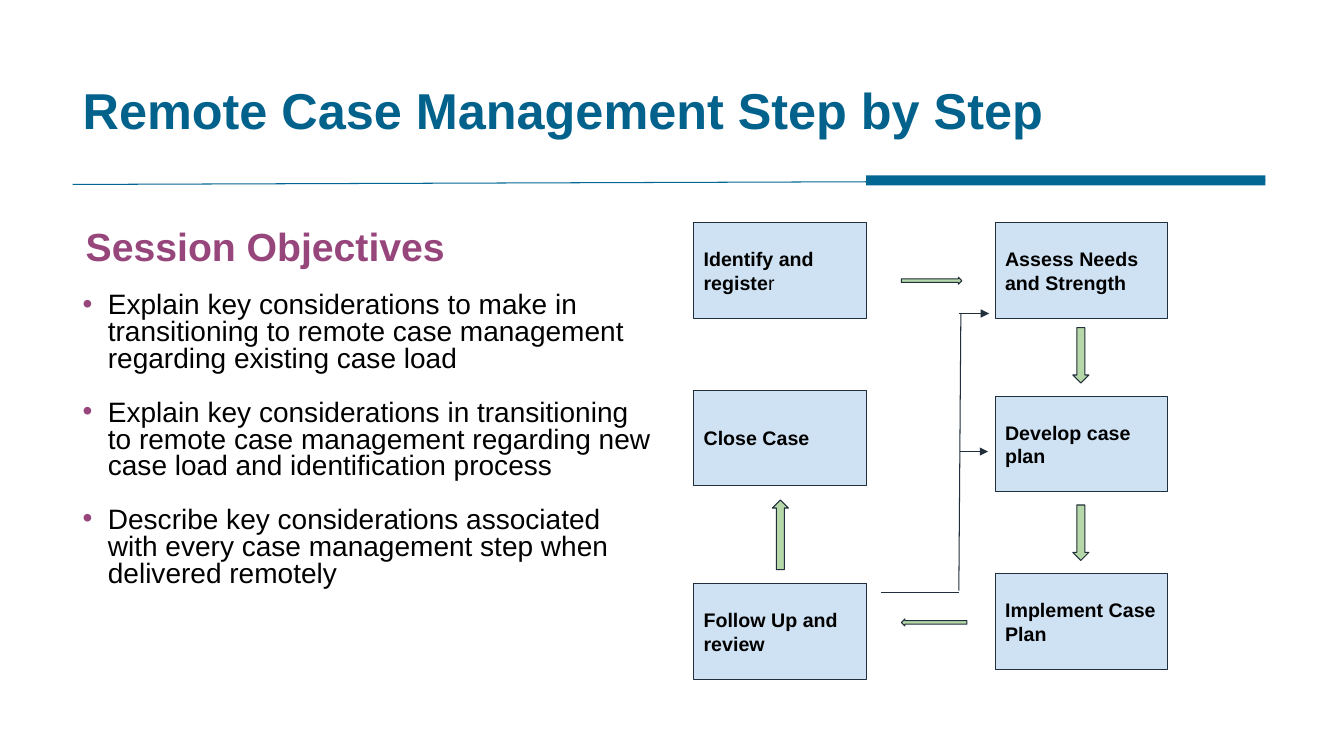
from dataclasses import dataclass

from lxml.etree import SubElement
from pptx import Presentation
from pptx.dml.color import RGBColor
from pptx.enum.shapes import MSO_CONNECTOR, MSO_SHAPE
from pptx.enum.text import MSO_ANCHOR, MSO_AUTO_SIZE, PP_ALIGN
from pptx.oxml.ns import qn
from pptx.util import Pt

PX = 9144  # EMU per px, at 100 px to the inch


@dataclass(frozen=True)
class Theme:
    font: str = "Arial"
    title: str = "02628C"
    rule: str = "036794"
    accent: str = "97467C"
    text: str = "000000"
    box: str = "CFE2F3"
    arrow: str = "B6D7A8"
    outline: str = "212E3B"
    title_size: int = 36
    heading_size: int = 28
    body_size: int = 20
    box_size: int = 14
    line_width: float = 0.75


THEME = Theme()

OBJECTIVES = [
    "Explain key considerations to make in transitioning to remote case "
    "management regarding existing case load",
    "Explain key considerations in transitioning to remote case management "
    "regarding new case load and identification process",
    "Describe key considerations associated with every case management step "
    "when delivered remotely",
]

LEFT_COLUMN, RIGHT_COLUMN = 688, 987
BOX_WIDTH, BOX_HEIGHT = 171, 95
STEPS = [
    (LEFT_COLUMN, 221, "Identify and register"),
    (RIGHT_COLUMN, 221, "Assess Needs and Strength"),
    (RIGHT_COLUMN, 393, "Develop case plan"),
    (RIGHT_COLUMN, 569, "Implement Case Plan"),
    (LEFT_COLUMN, 579, "Follow Up and review"),
    (LEFT_COLUMN, 387, "Close Case"),
]
STEP_ARROWS = [
    (MSO_SHAPE.RIGHT_ARROW, (894, 275, 60, 7)),
    (MSO_SHAPE.DOWN_ARROW, (1064, 325, 16, 55)),
    (MSO_SHAPE.DOWN_ARROW, (1064, 501, 16, 55)),
    (MSO_SHAPE.LEFT_ARROW, (894, 614, 65, 7)),
    (MSO_SHAPE.UP_ARROW, (766, 496, 16, 69)),
]
FEEDBACK_LINES = [
    ((874, 588), (951, 588), False),
    ((951, 586), (953, 311), False),
    ((951, 311), (981, 311), True),
    ((952, 448), (980, 448), True),
]


def emu(lengths):
    return [length * PX for length in lengths]


def format_run(run, size, color, bold):
    font = run.font
    font.name = THEME.font
    font.size = Pt(size)
    font.bold = bold
    font.color.rgb = RGBColor.from_string(color)


def fill_placeholder(placeholder, area, lines, size, color, bold, spacing, anchor):
    placeholder.left, placeholder.top, placeholder.width, placeholder.height = emu(area)
    frame = placeholder.text_frame
    frame.text = "\n".join(lines)
    frame.word_wrap = True
    frame.auto_size = MSO_AUTO_SIZE.NONE
    frame.vertical_anchor = anchor
    for paragraph in frame.paragraphs:
        paragraph.alignment = PP_ALIGN.LEFT
        paragraph.line_spacing = spacing
        paragraph.space_before = Pt(0)
        for run in paragraph.runs:
            format_run(run, size, color, bold)


def add_bullet(paragraph, color, indent):
    properties = paragraph._p.get_or_add_pPr()
    properties.set("marL", str(indent * PX))
    properties.set("indent", str(-indent * PX))
    bullet_color = SubElement(properties, qn("a:buClr"))
    SubElement(bullet_color, qn("a:srgbClr"), val=color)
    SubElement(properties, qn("a:buFont"), typeface=THEME.font)
    SubElement(properties, qn("a:buChar"), char="•")


def add_block(slide, kind, area, fill, outline=None):
    shape = slide.shapes.add_shape(kind, *emu(area))
    shape.shadow.inherit = False
    shape.fill.solid()
    shape.fill.fore_color.rgb = RGBColor.from_string(fill)
    if outline:
        shape.line.color.rgb = RGBColor.from_string(outline)
        shape.line.width = Pt(THEME.line_width)
    else:
        shape.line.fill.background()
    return shape


def add_step(slide, left, top, label):
    area = (left, top, BOX_WIDTH, BOX_HEIGHT)
    shape = add_block(slide, MSO_SHAPE.RECTANGLE, area, THEME.box, THEME.outline)
    frame = shape.text_frame
    frame.word_wrap = True
    frame.vertical_anchor = MSO_ANCHOR.MIDDLE
    frame.margin_left = frame.margin_right = 10 * PX
    frame.margin_top = frame.margin_bottom = 10 * PX
    paragraph = frame.paragraphs[0]
    paragraph.alignment = PP_ALIGN.LEFT
    # The final letter of "register" is set in regular weight.
    bold_end = len(label) - 1 if label.endswith("register") else len(label)
    for text, bold in ((label[:bold_end], True), (label[bold_end:], False)):
        if text:
            run = paragraph.add_run()
            run.text = text
            format_run(run, THEME.box_size, THEME.text, bold)


def add_line(slide, start, end, color, arrowhead=False):
    connector = slide.shapes.add_connector(
        MSO_CONNECTOR.STRAIGHT, *emu(start), *emu(end))
    connector.line.color.rgb = RGBColor.from_string(color)
    connector.line.width = Pt(THEME.line_width)
    properties = connector._element.spPr
    if arrowhead:
        SubElement(properties.find(qn("a:ln")), qn("a:tailEnd"), type="triangle")
    SubElement(properties, qn("a:effectLst"))


def add_texts(slide):
    placeholders = slide.placeholders
    fill_placeholder(
        slide.shapes.title, (72, 40, 1150, 145),
        ["Remote Case Management Step by Step"],
        THEME.title_size, THEME.title, True, 0.9, MSO_ANCHOR.MIDDLE)
    fill_placeholder(
        placeholders[1], (75, 221, 1183, 55), ["Session Objectives"],
        THEME.heading_size, THEME.accent, True, 0.9, MSO_ANCHOR.TOP)
    objectives = placeholders[2]
    fill_placeholder(
        objectives, (72, 286, 586, 335), OBJECTIVES,
        THEME.body_size, THEME.text, False, 0.8, MSO_ANCHOR.TOP)
    for index, paragraph in enumerate(objectives.text_frame.paragraphs):
        if index:
            paragraph.space_before = Pt(19)
        add_bullet(paragraph, THEME.accent, 25)
    for unused in (placeholders[3], placeholders[4]):
        unused._element.getparent().remove(unused._element)


def main():
    presentation = Presentation()
    presentation.slide_width, presentation.slide_height = emu((1333, 750))
    comparison_layout = presentation.slide_layouts[4]
    slide = presentation.slides.add_slide(comparison_layout)

    add_texts(slide)
    add_line(slide, (72, 183), (1255, 179), THEME.rule)
    add_block(slide, MSO_SHAPE.RECTANGLE, (859, 174, 396, 10), THEME.rule)
    for left, top, label in STEPS:
        add_step(slide, left, top, label)
    for kind, area in STEP_ARROWS:
        add_block(slide, kind, area, THEME.arrow, THEME.outline)
    for start, end, arrowhead in FEEDBACK_LINES:
        add_line(slide, start, end, THEME.outline, arrowhead)

    presentation.save("out.pptx")


if __name__ == "__main__":
    main()
